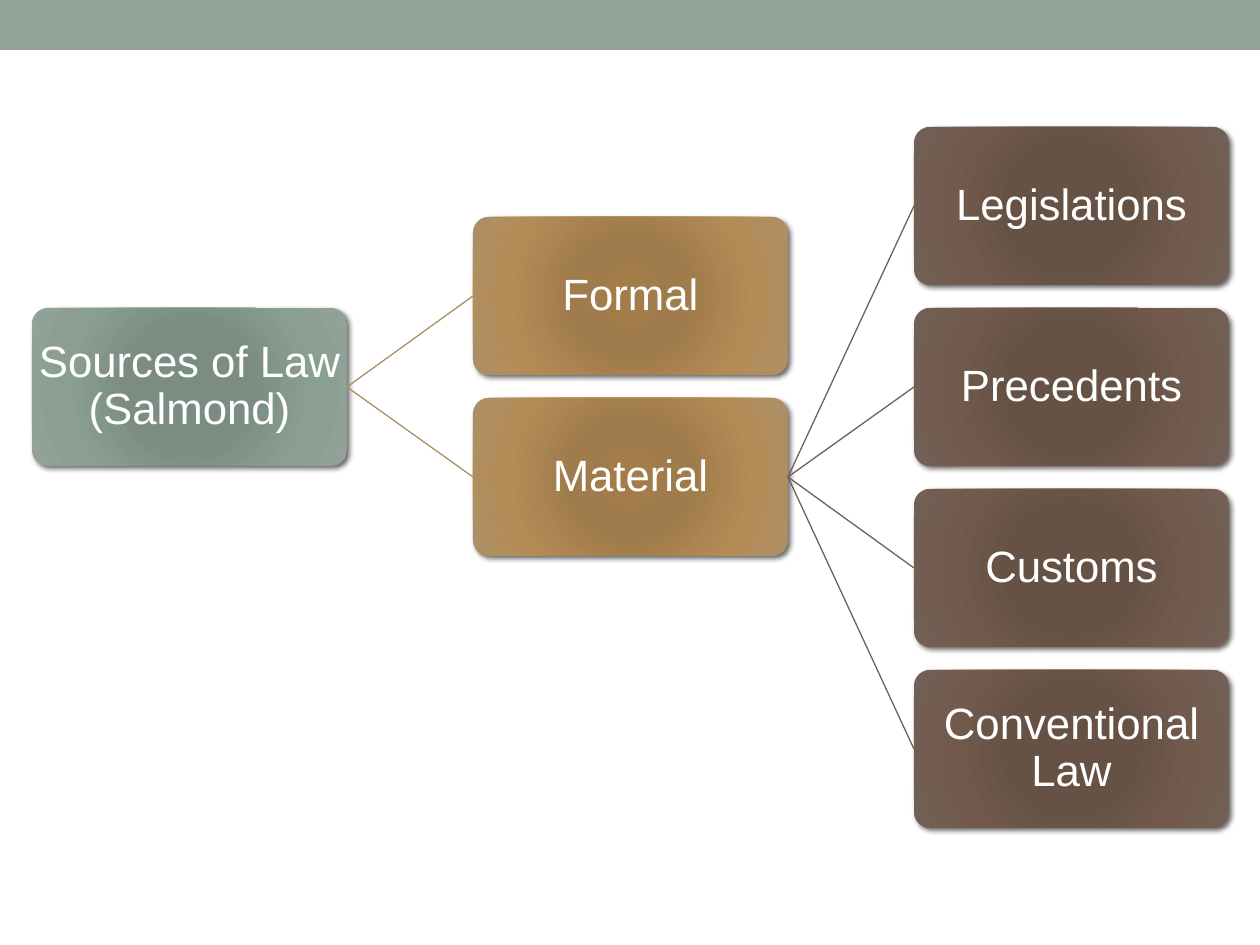
from lxml import etree
from pptx import Presentation
from pptx.dml.color import RGBColor
from pptx.enum import shapes, text
from pptx.oxml import parse_xml
from pptx.oxml.ns import nsdecls, qn
from pptx.util import Emu, Pt

WHITE = RGBColor(0xFF, 0xFF, 0xFF)
BLACK = RGBColor(0, 0, 0)
SAGE = RGBColor(0x93, 0xA2, 0x99)
OCHRE = RGBColor(0xAD, 0x8F, 0x67)
BROWN = RGBColor(0x72, 0x60, 0x56)

# Gradient colours of each level of the tree, from centre to edge
STOPS = (0, 34, 70, 100)
LEVELS = [
    (RGBColor(0x7B, 0x8E, 0x82), RGBColor(0x7B, 0x8D, 0x83), RGBColor(0x8A, 0x9E, 0x92), SAGE),
    (RGBColor(0xA3, 0x7D, 0x49), RGBColor(0xA0, 0x7C, 0x4C), RGBColor(0xB3, 0x8B, 0x55), OCHRE),
    (RGBColor(0x68, 0x50, 0x44), RGBColor(0x66, 0x51, 0x45), RGBColor(0x72, 0x5A, 0x4D), BROWN),
]

# (label, level, row in half steps, parent)
NODES = [
    ("Sources of Law (Salmond)", 0, 2, None),
    ("Formal", 1, 1, "Sources of Law (Salmond)"),
    ("Material", 1, 3, "Sources of Law (Salmond)"),
    ("Legislations", 2, 0, "Material"),
    ("Precedents", 2, 2, "Material"),
    ("Customs", 2, 4, "Material"),
    ("Conventional Law", 2, 6, "Material"),
]

SLIDE_W, SLIDE_H, BAR_H = 1260, 945, 50
BOX_W, BOX_H = 315, 158
LEFT, TOP = 32, 127
COLUMN_STEP, ROW_STEP = 441, 181
LEFT_SITE, RIGHT_SITE = 1, 3


def px(n):
    return Emu(n * 7257)


def style_box(sp, colors):
    """Give the box a radial gradient and a soft drop shadow."""
    stops = "".join(
        f'<a:gs pos="{pos * 1000}"><a:srgbClr val="{color}"/></a:gs>'
        for pos, color in zip(STOPS, colors))
    gradient = parse_xml(
        f'<a:gradFill {nsdecls("a")} rotWithShape="1"><a:gsLst>{stops}</a:gsLst>'
        '<a:path path="circle"><a:fillToRect l="100000" t="100000" r="100000" b="100000"/>'
        '</a:path></a:gradFill>')
    shadow = parse_xml(
        f'<a:effectLst {nsdecls("a")}><a:outerShdw blurRad="{Pt(3)}" dist="{Pt(2)}" '
        f'dir="2700000" rotWithShape="0"><a:srgbClr val="{BLACK}"><a:alpha val="60000"/>'
        '</a:srgbClr></a:outerShdw></a:effectLst>')
    sp.line.fill.background()
    props = sp._element.spPr
    props.find(qn("a:ln")).addprevious(gradient)
    props.append(shadow)


def add_box(slide, label, level, row):
    sp = slide.shapes.add_shape(
        shapes.MSO_SHAPE.ROUNDED_RECTANGLE,
        px(LEFT + level * COLUMN_STEP), px(TOP + row * ROW_STEP // 2), px(BOX_W), px(BOX_H))
    sp.adjustments[0] = 0.1
    style_box(sp, LEVELS[level])
    tf = sp.text_frame
    tf.word_wrap = True
    tf.vertical_anchor = text.MSO_ANCHOR.MIDDLE
    tf.margin_left = tf.margin_right = tf.margin_top = tf.margin_bottom = px(2)
    tf.text = label
    p = tf.paragraphs[0]
    p.alignment = text.PP_ALIGN.CENTER
    p.line_spacing = 0.9
    font = p.runs[0].font
    font.name, font.size = "Arial", Pt(25)
    font.color.rgb = WHITE
    return sp


def add_branch(slide, parent, child, color):
    line = slide.shapes.add_connector(shapes.MSO_CONNECTOR.STRAIGHT, 0, 0, 0, 0)
    line.begin_connect(parent, RIGHT_SITE)
    line.end_connect(child, LEFT_SITE)
    line.line.color.rgb = color
    line.line.width = Pt(0.75)
    etree.SubElement(line._element.spPr, qn("a:effectLst"))


def main():
    prs = Presentation()
    prs.slide_width, prs.slide_height = px(SLIDE_W), px(SLIDE_H)
    slide = prs.slides.add_slide(prs.slide_layouts[6])

    bar = slide.shapes.add_shape(shapes.MSO_SHAPE.RECTANGLE, 0, 0, px(SLIDE_W), px(BAR_H))
    bar.shadow.inherit = False
    bar.fill.solid()
    bar.fill.fore_color.rgb = SAGE
    bar.line.fill.background()

    boxes = {}
    for label, level, row, parent in NODES:
        boxes[label] = add_box(slide, label, level, row)
        if parent:
            add_branch(slide, boxes[parent], boxes[label], LEVELS[level][-1])

    prs.save("out.pptx")


if __name__ == "__main__":
    main()
